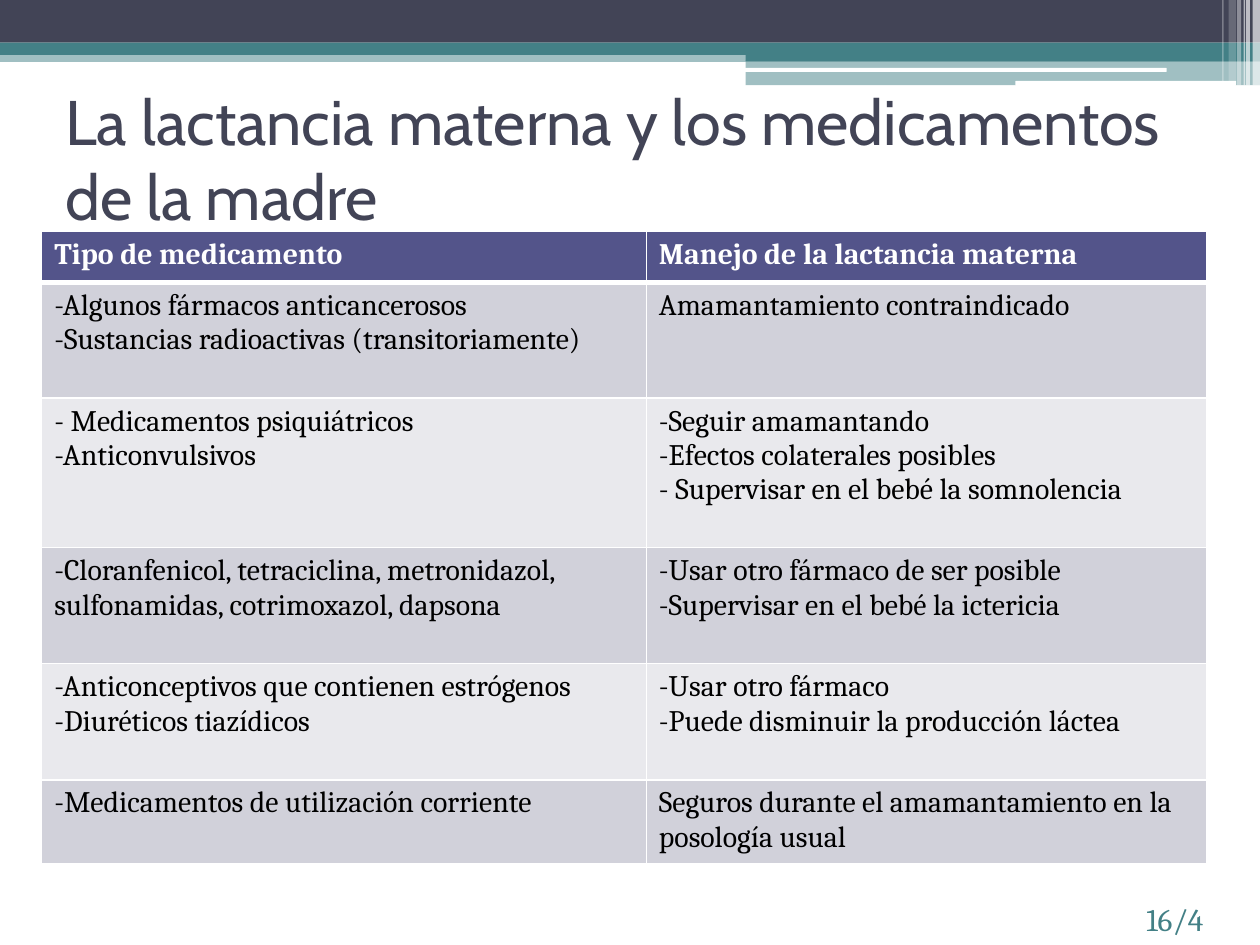
"""Builds a slide with a table on breastfeeding and the mother's medication."""
from lxml import etree
from pptx import Presentation, util as u
from pptx.dml.color import RGBColor
from pptx.enum import shapes, text
from pptx.oxml import ns

TITLE = "La lactancia materna y los medicamentos de la madre"
PAGE = "16/4"
HEADINGS = ("Tipo de medicamento", "Manejo de la lactancia materna")
MEDICINES = [
    (["-Algunos fármacos anticancerosos", "-Sustancias radioactivas (transitoriamente)"],
     ["Amamantamiento contraindicado"]),
    (["- Medicamentos psiquiátricos", "-Anticonvulsivos"],
     ["-Seguir amamantando", "-Efectos colaterales posibles",
      "- Supervisar en el bebé la somnolencia"]),
    (["-Cloranfenicol, tetraciclina, metronidazol, sulfonamidas, cotrimoxazol, dapsona"],
     ["-Usar otro fármaco de ser posible", "-Supervisar en el bebé la ictericia"]),
    (["-Anticonceptivos que contienen estrógenos", "-Diuréticos tiazídicos"],
     ["-Usar otro fármaco", "-Puede disminuir la producción láctea"]),
    (["-Medicamentos de utilización corriente"],
     ["Seguros durante el amamantamiento en la posología usual"]),
]
COLUMN_WIDTHS = (12.19, 11.3)
ROW_HEIGHTS = (1.02, 2.33, 3.02, 2.34, 2.34, 1.65)

THEME = {
    "dark": "424456", "teal": "438086", "white": "FFFFFF", "black": "000000",
    "header": "53548A", "bands": ("D1D1DA", "E9E9ED"),
    "title": {"name": "Cabin", "size": u.Pt(36)},
    "table": {"name": "Cambria", "size": u.Pt(17)},
    "page": {"name": "Cambria", "size": u.Pt(18)},
}

BANDS = [
    ((0, 1.02, 25.4, 0.23), "teal", 50),
    ((0, 0, 25.4, 0.86), "dark", 100),
    ((0, 0.86, 25.4, 0.25), "teal", 100),
    ((15.03, 0.99, 10.37, 0.24), "teal", 100),
    ((15.03, 1.22, 10.37, 0.5), "teal", 50),
]
HIGHLIGHTS = [(15.01, 1.37, 8.51, 0.08), (20.47, 1.63, 4.45, 0.1)]
STRIPES = [
    (25.25, 0.15, 1.73, 65), (25.12, 0.08, 1.73, 65), (25.07, 0.03, 1.73, 60),
    (24.94, 0.08, 1.73, 40), (24.77, 0.15, 1.63, 20), (24.64, 0.03, 1.63, 30),
]


def add_block(slide, box, color, alpha=100, kind=shapes.MSO_SHAPE.RECTANGLE):
    block = slide.shapes.add_shape(kind, *map(u.Cm, box))
    block.shadow.inherit = False
    block.line.fill.background()
    block.fill.solid()
    block.fill.fore_color.rgb = RGBColor.from_string(THEME[color])
    if alpha < 100:
        tint = block.fill._xPr.find(".//" + ns.qn("a:srgbClr"))
        etree.SubElement(tint, ns.qn("a:alpha"), val=str(alpha * 1000))


def write(frame, lines, font, color, bold=False):
    style = {**THEME[font], "bold": bold}
    for index, line in enumerate(lines):
        paragraph = frame.paragraphs[0] if index == 0 else frame.add_paragraph()
        run = paragraph.add_run()
        run.text = line
        run.font.color.rgb = RGBColor.from_string(THEME[color])
        for key, value in style.items():
            setattr(run.font, key, value)


def add_label(slide, box, line, font, color, anchor):
    frame = slide.shapes.add_textbox(*map(u.Cm, box)).text_frame
    for key, value in {"word_wrap": True, "vertical_anchor": anchor}.items():
        setattr(frame, key, value)
    write(frame, [line], font, color)


def add_borders(cell, widths):
    properties = cell._tc.get_or_add_tcPr()
    for side, width in widths.items():
        border = etree.SubElement(properties, ns.qn("a:ln" + side), w=str(u.Pt(width)))
        fill = etree.SubElement(border, ns.qn("a:solidFill"))
        etree.SubElement(fill, ns.qn("a:srgbClr"), val=THEME["white"])


def add_medicines(slide):
    rows = [[[heading] for heading in HEADINGS], *MEDICINES]
    box = (0.84, 4.67, sum(COLUMN_WIDTHS), sum(ROW_HEIGHTS))
    table = slide.shapes.add_table(len(rows), len(HEADINGS), *map(u.Cm, box)).table
    table.horz_banding = False
    for column, width in zip(table.columns, COLUMN_WIDTHS):
        column.width = u.Cm(width)
    for r, (entries, height) in enumerate(zip(rows, ROW_HEIGHTS)):
        table.rows[r].height = u.Cm(height)
        heading = r == 0
        color = THEME["header"] if heading else THEME["bands"][(r - 1) % 2]
        borders = {"L": 1, "R": 1, "T": 3 if r == 1 else 1, "B": 3 if heading else 1}
        for c, lines in enumerate(entries):
            cell = table.cell(r, c)
            add_borders(cell, borders)
            cell.fill.solid()
            cell.fill.fore_color.rgb = RGBColor.from_string(color)
            write(cell.text_frame, lines, "table", "white" if heading else "black", heading)


def main():
    deck = Presentation()
    deck.slide_width, deck.slide_height = u.Cm(25.4), u.Cm(19.05)
    slide = deck.slides.add_slide(deck.slide_layouts[6])
    for box, color, alpha in BANDS:
        add_block(slide, box, color, alpha)
    for box in HIGHLIGHTS:
        add_block(slide, box, "white", kind=shapes.MSO_SHAPE.ROUNDED_RECTANGLE)
    for left, width, height, alpha in STRIPES:
        add_block(slide, (left, 0, width, height), "white", alpha)
    add_label(slide, (1.07, 1.7, 23.5, 2.97), TITLE, "title", "dark", text.MSO_ANCHOR.MIDDLE)
    add_medicines(slide)
    add_label(slide, (22.86, 18.01, 2.54, 1.02), PAGE, "page", "teal", text.MSO_ANCHOR.TOP)
    deck.save("out.pptx")


if __name__ == "__main__":
    main()
